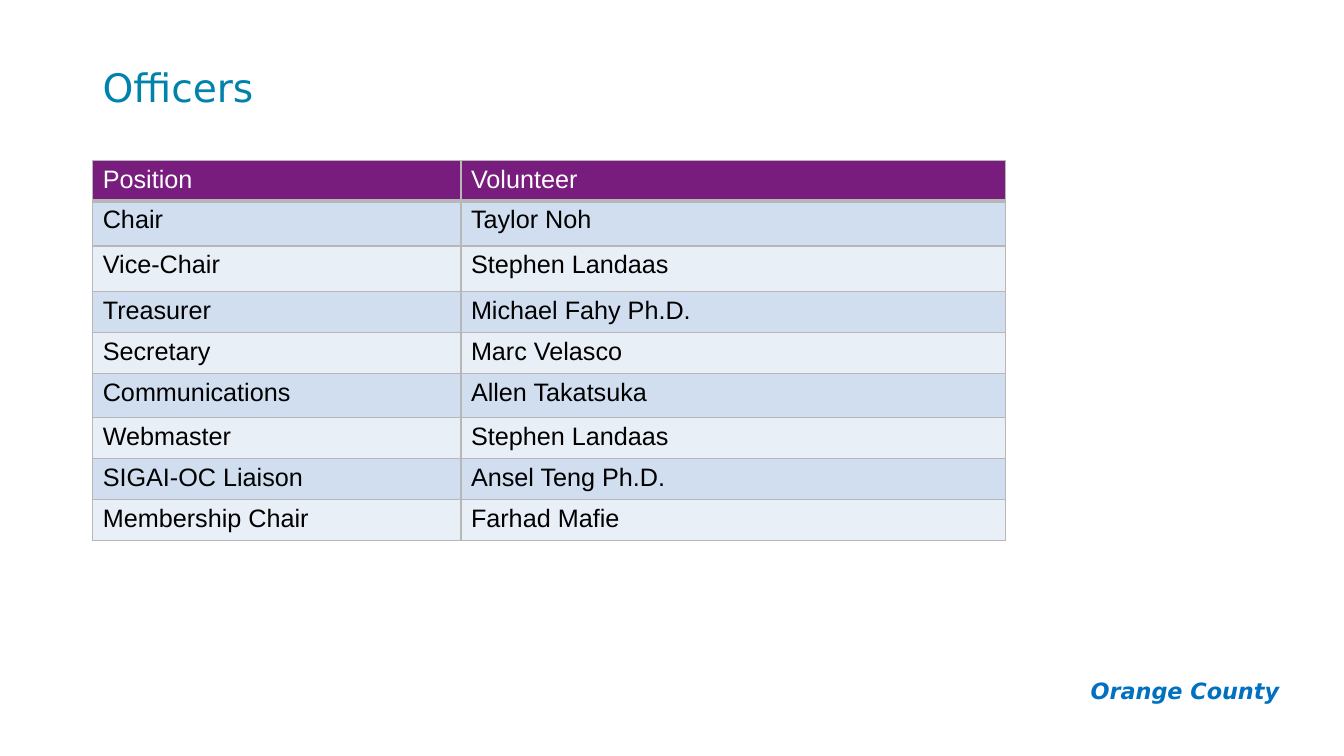
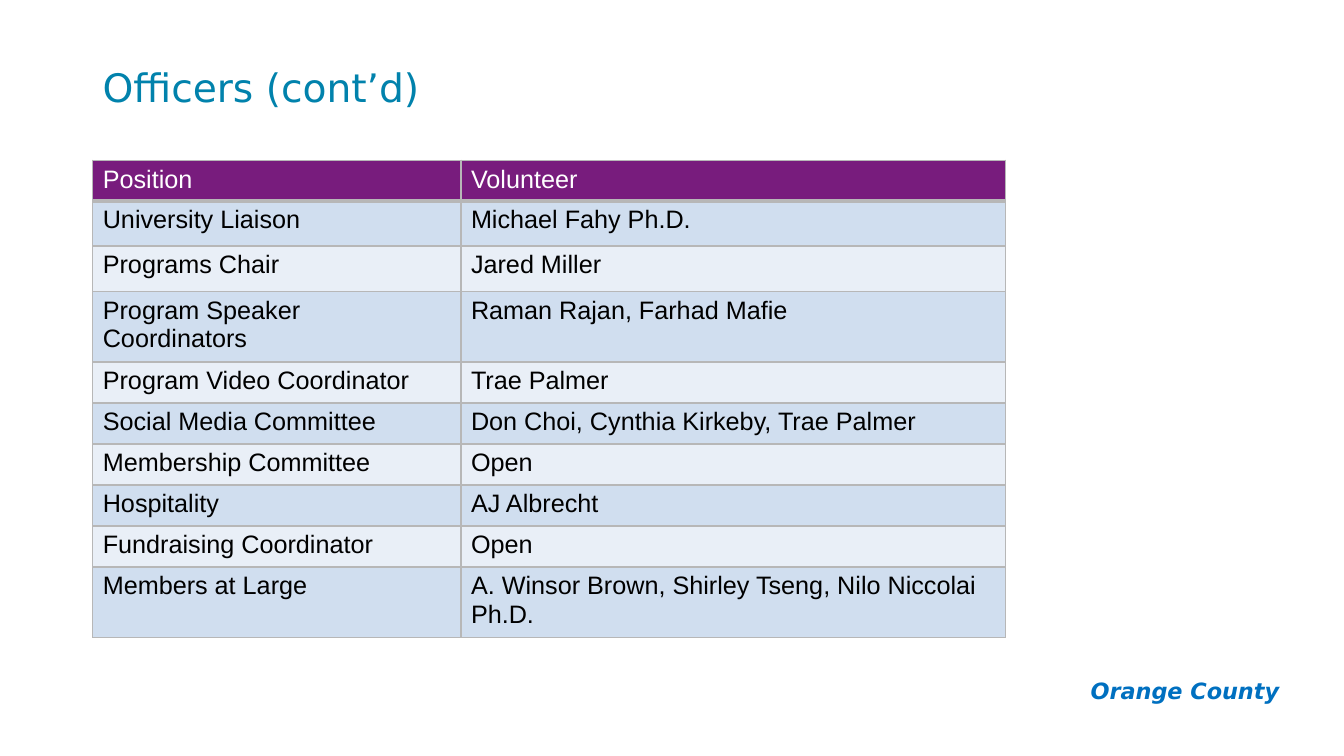
from dataclasses import dataclass, field

from lxml.etree import SubElement
from pptx import Presentation
from pptx.dml.color import RGBColor
from pptx.enum.text import MSO_ANCHOR as Anchor, PP_ALIGN as Align
from pptx.oxml.ns import qn
from pptx.util import Pt

# Shared look
TITLE_FONT, TABLE_FONT = "DejaVu Sans", "Arial"
TITLE_COLOR, FOOTER_COLOR = "0182AC", "0070C0"
HEADER_FILL, HEADER_TEXT, BODY_TEXT = "781C7D", "FFFFFF", "000000"
BAND_FILLS = ("D0DEEF", "E9EFF7")
BORDER_COLOR, BORDER, HEADER_BORDER = "B7B7B7", 1, 3

# Table grid, in points
TABLE_LEFT, TABLE_TOP = 66.24, 114.48
COLUMN_WIDTHS = (263, 389)
HEADER_HEIGHT, ROW_HEIGHT, TALL_ROW, MEDIUM_ROW = 26, 29.3, 32.4, 31.5
HEADINGS = ("Position", "Volunteer")


@dataclass
class TextStyle:
    font: str
    size: float
    color: str
    bold: bool = False
    italic: bool = False


@dataclass
class Officer:
    position: str
    volunteer: str
    height: float = ROW_HEIGHT


@dataclass
class OfficerSlide:
    title: str
    officers: list[Officer] = field(default_factory=list)


TITLE_STYLE = TextStyle(TITLE_FONT, 28, TITLE_COLOR)
FOOTER_STYLE = TextStyle(TITLE_FONT, 16, FOOTER_COLOR, bold=True, italic=True)
HEADER_STYLE = TextStyle(TABLE_FONT, 18, HEADER_TEXT)
BODY_STYLE = TextStyle(TABLE_FONT, 18, BODY_TEXT)

SLIDES = [
    OfficerSlide("Officers", [
        Officer("Chair", "Taylor Noh", TALL_ROW),
        Officer("Vice-Chair", "Stephen Landaas", TALL_ROW),
        Officer("Treasurer", "Michael Fahy Ph.D."),
        Officer("Secretary", "Marc Velasco"),
        Officer("Communications", "Allen Takatsuka", MEDIUM_ROW),
        Officer("Webmaster", "Stephen Landaas"),
        Officer("SIGAI-OC Liaison", "Ansel Teng Ph.D."),
        Officer("Membership Chair", "Farhad Mafie"),
    ]),
    OfficerSlide("Officers (cont’d)", [
        Officer("University Liaison", "Michael Fahy Ph.D.", TALL_ROW),
        Officer("Programs Chair", "Jared Miller", TALL_ROW),
        Officer("Program Speaker Coordinators", "Raman Rajan, Farhad Mafie", TALL_ROW),
        Officer("Program Video Coordinator", "Trae Palmer"),
        Officer("Social Media Committee", "Don Choi, Cynthia Kirkeby, Trae Palmer"),
        Officer("Membership Committee", "Open"),
        Officer("Hospitality", "AJ Albrecht"),
        Officer("Fundraising Coordinator", "Open"),
        Officer("Members at Large", "A. Winsor Brown, Shirley Tseng, Nilo Niccolai Ph.D."),
    ]),
]


def rgb(color: str) -> RGBColor:
    return RGBColor.from_string(color)


def add_run(paragraph, text: str, style: TextStyle) -> None:
    run = paragraph.add_run()
    run.text = text
    font = run.font
    font.name, font.size = style.font, Pt(style.size)
    font.bold, font.italic = style.bold, style.italic
    font.color.rgb = rgb(style.color)


def add_text(slide, text: str, style: TextStyle, box: tuple[float, ...],
             vertical_inset: float):
    """Add a one-line text box and return its shape."""
    shape = slide.shapes.add_textbox(*map(Pt, box))
    frame = shape.text_frame
    frame.word_wrap = True
    frame.margin_left = frame.margin_right = Pt(7.2)
    frame.margin_top = frame.margin_bottom = Pt(vertical_inset)
    add_run(frame.paragraphs[0], text, style)
    return shape


def add_title(slide, text: str) -> None:
    shape = add_text(slide, text, TITLE_STYLE, (66.24, 28.8, 828, 71.28), 3.6)
    shape.text_frame.vertical_anchor = Anchor.MIDDLE
    shape.text_frame.paragraphs[0].line_spacing = 0.9


def add_footer(slide) -> None:
    shape = add_text(slide, "Orange County", FOOTER_STYLE,
                     (756.72, 476.64, 164.16, 33.84), 7.2)
    shape.text_frame.paragraphs[0].alignment = Align.RIGHT


def set_borders(cell, top: float, bottom: float) -> None:
    properties = cell._tc.get_or_add_tcPr()
    widths = {"a:lnL": BORDER, "a:lnR": BORDER, "a:lnT": top, "a:lnB": bottom}
    for tag, width in widths.items():
        line = SubElement(properties, qn(tag), w=str(Pt(width)))
        fill = SubElement(line, qn("a:solidFill"))
        SubElement(fill, qn("a:srgbClr"), val=BORDER_COLOR)


def add_officer_table(slide, officers: list[Officer]) -> None:
    rows = [Officer(*HEADINGS, HEADER_HEIGHT), *officers]
    table = slide.shapes.add_table(
        len(rows), len(COLUMN_WIDTHS), Pt(TABLE_LEFT), Pt(TABLE_TOP),
        Pt(sum(COLUMN_WIDTHS)), Pt(sum(row.height for row in rows))).table
    table.horz_banding = False
    for column, width in zip(table.columns, COLUMN_WIDTHS):
        column.width = Pt(width)

    for index, officer in enumerate(rows):
        is_header = index == 0
        style = HEADER_STYLE if is_header else BODY_STYLE
        fill = HEADER_FILL if is_header else BAND_FILLS[(index - 1) % 2]
        table.rows[index].height = Pt(officer.height)
        for column, text in enumerate((officer.position, officer.volunteer)):
            cell = table.cell(index, column)
            # Borders come before the fill in the cell properties
            set_borders(cell, top=HEADER_BORDER if index == 1 else BORDER,
                        bottom=HEADER_BORDER if is_header else BORDER)
            cell.fill.solid()
            cell.fill.fore_color.rgb = rgb(fill)
            add_run(cell.text_frame.paragraphs[0], text, style)


def main() -> None:
    presentation = Presentation()
    presentation.slide_width, presentation.slide_height = Pt(960), Pt(540)
    blank_layout = presentation.slide_layouts[6]
    for content in SLIDES:
        slide = presentation.slides.add_slide(blank_layout)
        add_footer(slide)
        add_title(slide, content.title)
        add_officer_table(slide, content.officers)
    presentation.save("out.pptx")


if __name__ == "__main__":
    main()
